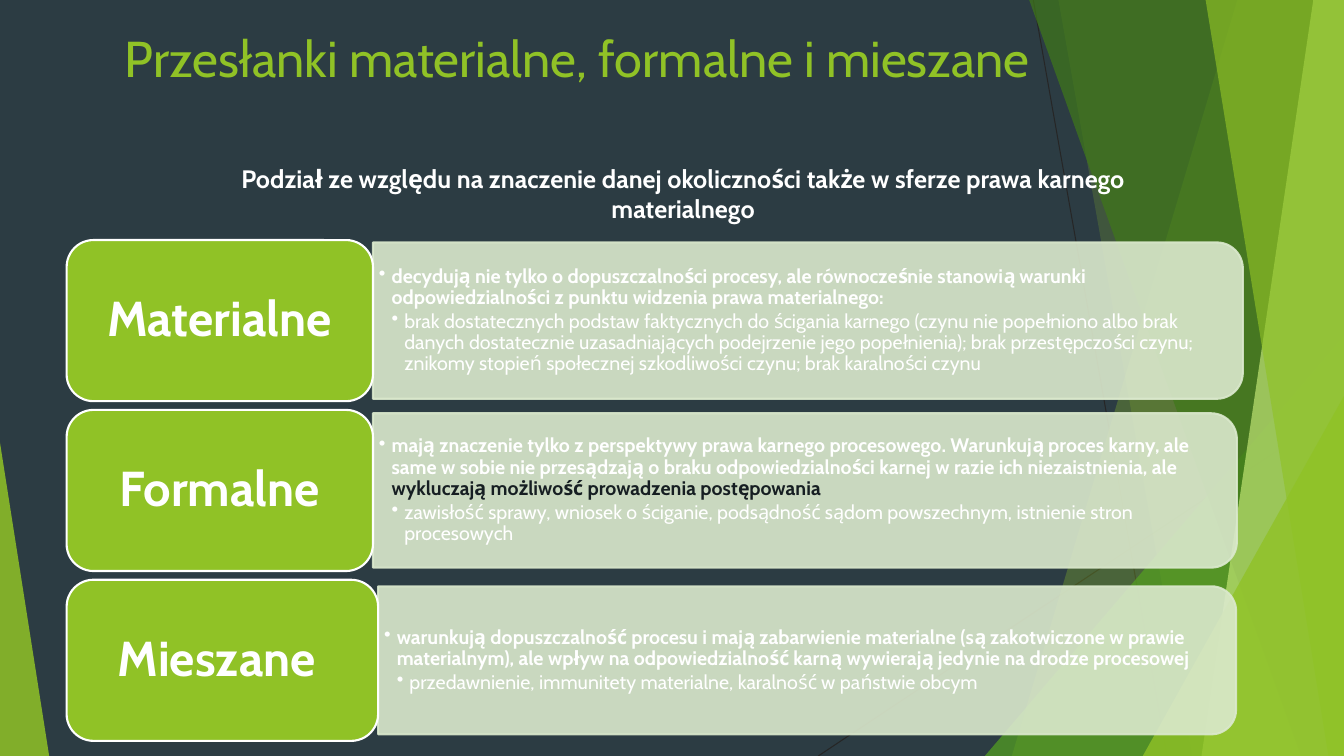
from lxml import etree
from pptx import Presentation
from pptx.dml.color import RGBColor
from pptx.enum.shapes import MSO_CONNECTOR, MSO_SHAPE
from pptx.enum.text import MSO_ANCHOR, PP_ALIGN
from pptx.oxml.ns import qn
from pptx.util import Cm, Pt

STRAIGHT = MSO_CONNECTOR.STRAIGHT
TRIANGLE = MSO_SHAPE.ISOSCELES_TRIANGLE
ROUNDED = MSO_SHAPE.ROUNDED_RECTANGLE
ROUNDED_TOP = MSO_SHAPE.ROUND_2_SAME_RECTANGLE
MIDDLE = MSO_ANCHOR.MIDDLE
CENTER = PP_ALIGN.CENTER

WIDTH, HEIGHT = 33.87, 19.05
GREEN, WHITE, PALE, DARK = "90C226", "FFFFFF", "DBE9CD", "161E22"


def paint(fill, color, opacity=100):
    fill.solid()
    fill.fore_color.rgb = RGBColor.from_string(color)
    if opacity < 100:
        srgb = fill._xPr.find(qn("a:solidFill")).find(qn("a:srgbClr"))
        etree.SubElement(srgb, qn("a:alpha")).set("val", str(opacity * 1000))


def style(paragraph, size, color, bold=False):
    font = paragraph.font
    font.name = "Cabin"
    font.size = Pt(size)
    font.bold = bold
    paint(font.fill, color)


prs = Presentation()
prs.slide_width, prs.slide_height = Cm(WIDTH), Cm(HEIGHT)
slide = prs.slides.add_slide(prs.slide_layouts[6])
paint(slide.background.fill, "2C3C43")
shapes = slide.shapes

for x1, y1, x2, y2 in [(26.04, 0, 29.41, HEIGHT), (WIDTH, 10.24, 20.62, HEIGHT)]:
    ray = shapes.add_connector(STRAIGHT, Cm(x1), Cm(y1), Cm(x2), Cm(y2))
    paint(ray.line.fill, "262626")
    ray.line.width = Pt(0.75)
    etree.SubElement(ray._element.spPr, qn("a:effectLst"))

facets = [
    ("band", 31.19, 25.5, GREEN, 30),
    ("band", 26.67, 30.05, GREEN, 20),
    ("corner", 24.82, 8.46, "54A021", 72),
    ("band", 25.93, 32.79, "3F7819", 70),
    ("band", 33.1, 30.28, "C0E474", 70),
    ("band", 30.38, 33.48, GREEN, 65),
    ("corner", 28.8, 9.98, GREEN, 80),
]
for kind, first, second, color, opacity in facets:
    if kind == "band":
        outline = shapes.build_freeform(Cm(first), Cm(-0.02))
        outline.add_line_segments(
            [(Cm(WIDTH), Cm(-0.02)), (Cm(WIDTH), Cm(HEIGHT)), (Cm(second), Cm(HEIGHT))])
        facet = outline.convert_to_shape()
    else:
        facet = shapes.add_shape(
            TRIANGLE, Cm(first), Cm(second), Cm(WIDTH - first), Cm(HEIGHT - second))
        facet.adjustments[0] = 1
    paint(facet.fill, color, opacity)
    facet.line.fill.background()
    facet.shadow.inherit = False

left_facet = shapes.add_shape(TRIANGLE, 0, Cm(11.15), Cm(1.24), Cm(7.9))
left_facet.adjustments[0] = 0
paint(left_facet.fill, GREEN, 85)
left_facet.line.fill.background()
left_facet.shadow.inherit = False

headings = [
    ("Przesłanki materialne, formalne i mieszane",
     2.9, 0.56, 29.64, 3.76, 36, GREEN, False, None),
    ("Podział ze względu na znaczenie danej okoliczności także w sferze prawa karnego materialnego",
     4.06, 3.99, 26.31, 1.8, 18, WHITE, True, CENTER),
]
for text, left, top, width, height, size, color, bold, alignment in headings:
    heading = shapes.add_textbox(Cm(left), Cm(top), Cm(width), Cm(height)).text_frame
    heading.word_wrap = True
    heading.text = text
    heading.paragraphs[0].alignment = alignment
    style(heading.paragraphs[0], size, color, bold)

LABEL_LEFT, LABEL_HEIGHT = 1.68, 4.06
FIRST_MIDDLE, ROW_PITCH = 8.08, 4.28
premises = [
    ("Materialne", 7.72, 21.92, 3.94,
     [("decydują nie tylko o dopuszczalności procesy, ale równocześnie stanowią warunki "
       "odpowiedzialności z punktu widzenia prawa materialnego:", WHITE)],
     "brak dostatecznych podstaw faktycznych do ścigania karnego (czynu nie popełniono albo brak "
     "danych dostatecznie uzasadniających podejrzenie jego popełnienia); brak przestępczości czynu; "
     "znikomy stopień społecznej szkodliwości czynu; brak karalności czynu"),
    ("Formalne", 7.72, 21.77, 3.89,
     [("mają znaczenie tylko z perspektywy prawa karnego procesowego. Warunkują proces karny, ale "
       "same w sobie nie przesądzają o braku odpowiedzialności karnej w razie ich niezaistnienia, ale ",
       WHITE),
      ("wykluczają możliwość prowadzenia postępowania", DARK)],
     "zawisłość sprawy, wniosek o ściganie, podsądność sądom powszechnym, istnienie stron procesowych"),
    ("Mieszane ", 7.85, 21.62, 3.73,
     [("warunkują dopuszczalność procesu i mają zabarwienie materialne (są zakotwiczone w prawie "
       "materialnym), ale wpływ na odpowiedzialność karną wywierają jedynie na drodze procesowej", WHITE)],
     "przedawnienie, immunitety materialne, karalność w państwie obcym"),
]
for row, (name, label_width, panel_width, panel_height, meaning, examples) in enumerate(premises):
    middle = FIRST_MIDDLE + row * ROW_PITCH
    panel_left = LABEL_LEFT + label_width

    panel = shapes.add_shape(
        ROUNDED_TOP,
        Cm(panel_left + (panel_width - panel_height) / 2), Cm(middle - panel_width / 2),
        Cm(panel_height), Cm(panel_width))
    panel.rotation = 90
    panel.shadow.inherit = False
    paint(panel.fill, PALE, 90)
    paint(panel.line.fill, PALE, 90)
    panel.line.width = Pt(1.5)

    text_height = panel_height - 0.38
    description = shapes.add_textbox(
        Cm(panel_left), Cm(middle - text_height / 2),
        Cm(panel_width - 0.18), Cm(text_height)).text_frame
    description.word_wrap = True
    description.vertical_anchor = MIDDLE
    description.margin_left = description.margin_right = Cm(0.15)
    description.margin_top = description.margin_bottom = Cm(0.08)
    points = [meaning, [(examples, WHITE)]]
    for level, parts in enumerate(points, start=1):
        point = description.paragraphs[0] if level == 1 else description.add_paragraph()
        point.level = level
        point.line_spacing = 0.9
        point.space_after = Pt(2.1)
        style(point, 14, WHITE, bold=level == 1)
        properties = point._p.get_or_add_pPr()
        properties.set("marL", str(Cm(0.32 * level)))
        properties.set("indent", str(Cm(-0.32)))
        bullet = etree.Element(qn("a:buChar"), char="•")
        properties.find(qn("a:defRPr")).addprevious(bullet)
        for text, color in parts:
            run = point.add_run()
            run.text = text
            if color != WHITE:
                paint(run.font.fill, color)

    label = shapes.add_shape(
        ROUNDED, Cm(LABEL_LEFT), Cm(middle - LABEL_HEIGHT / 2), Cm(label_width), Cm(LABEL_HEIGHT))
    label.shadow.inherit = False
    paint(label.fill, GREEN)
    paint(label.line.fill, WHITE)
    label.line.width = Pt(1.5)
    label.text_frame.text = name
    label.text_frame.vertical_anchor = MIDDLE
    title = label.text_frame.paragraphs[0]
    title.alignment = CENTER
    title.line_spacing = 0.9
    style(title, 35, WHITE, bold=True)

prs.save("out.pptx")
